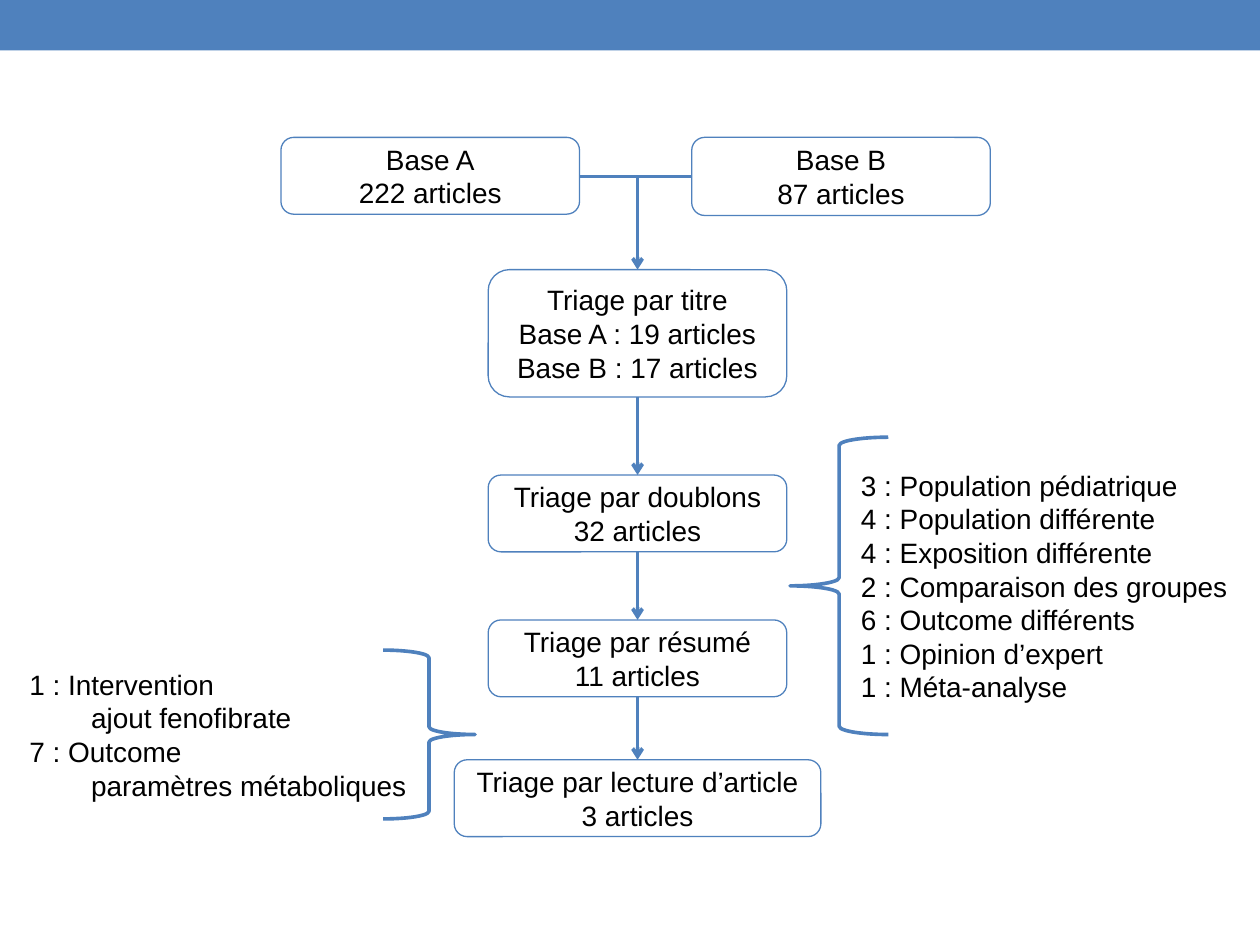
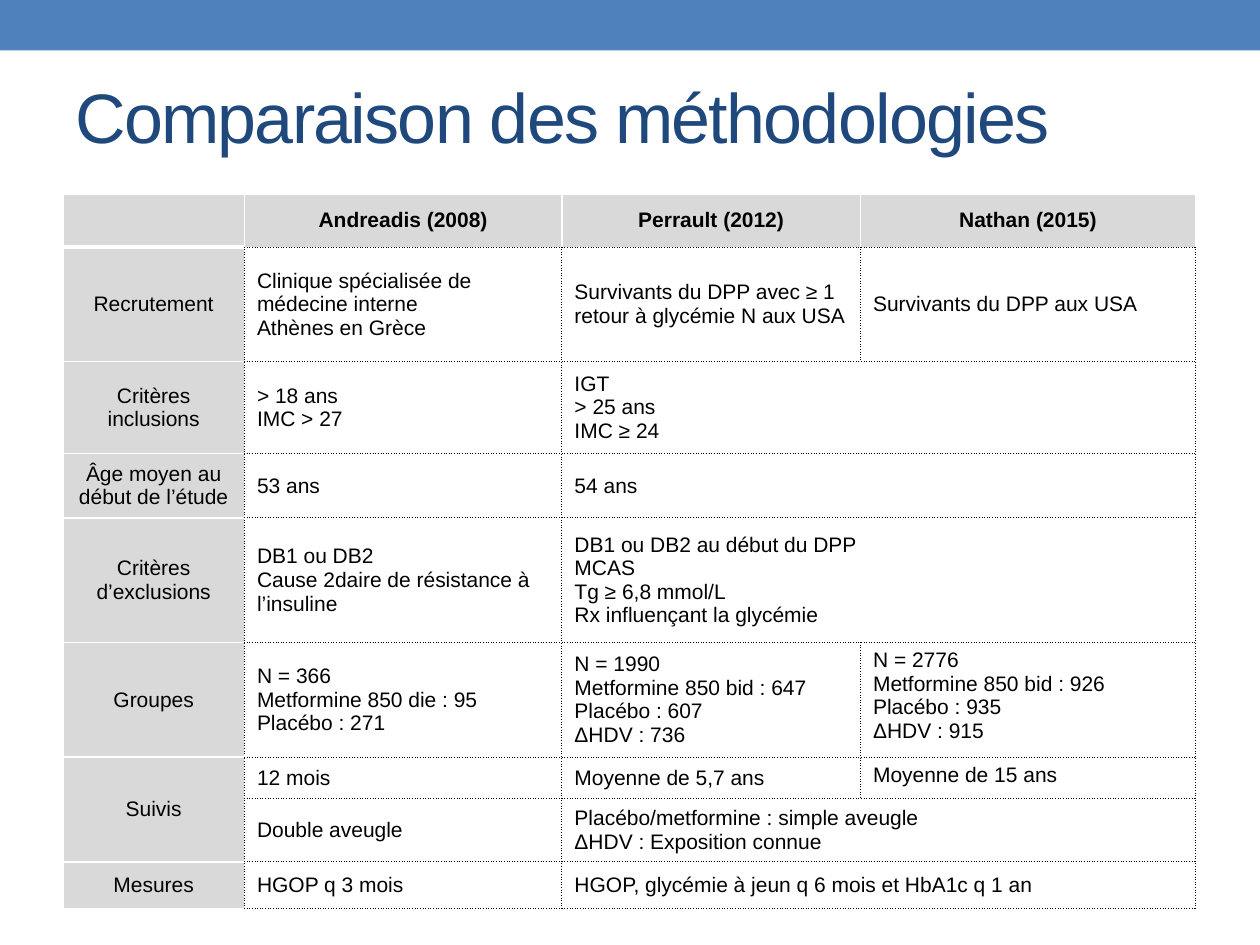
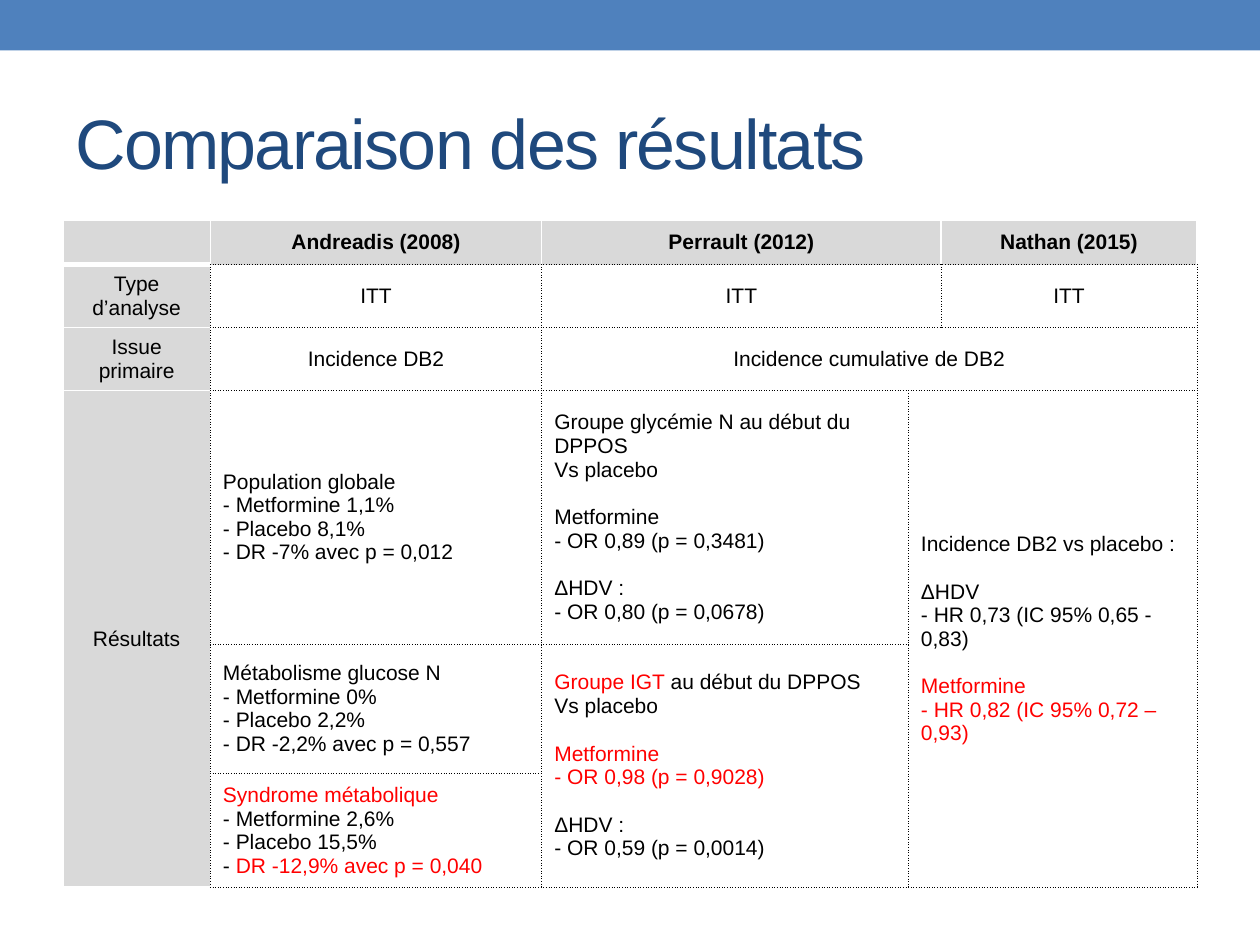
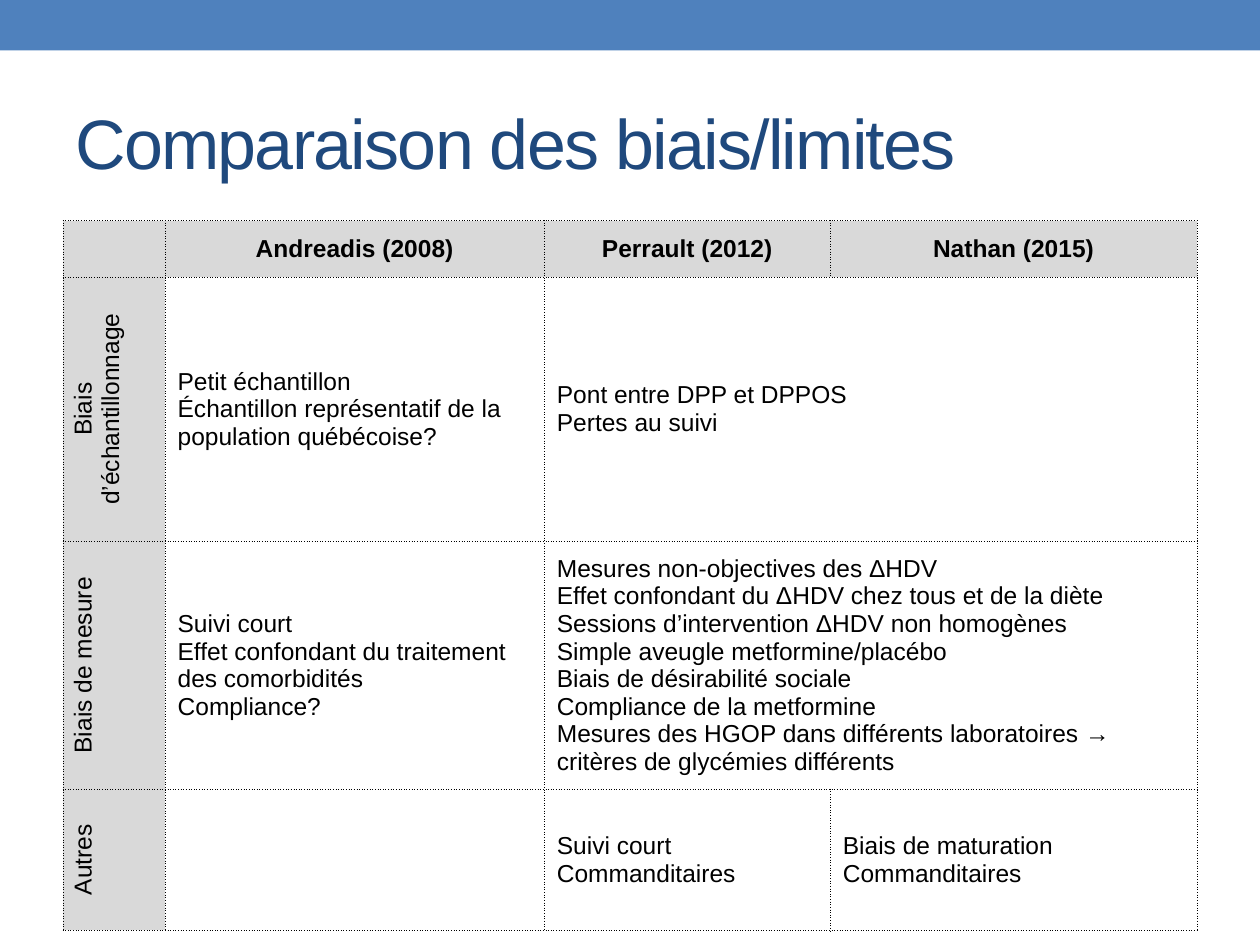
"""Build four slides on the selection and comparison of diabetes prevention studies."""
from itertools import pairwise

from lxml.etree import SubElement
from pptx import Presentation
from pptx.dml.color import RGBColor
from pptx.enum.shapes import MSO_CONNECTOR as Connector, MSO_SHAPE as Shape
from pptx.enum.text import MSO_ANCHOR as Anchor, PP_ALIGN as Align
from pptx.oxml.ns import qn
from pptx.util import Inches, Pt

BLUE = RGBColor(0x4F, 0x81, 0xBD)
NAVY = RGBColor(0x1F, 0x49, 0x7D)
GRAY = RGBColor(0xD9, 0xD9, 0xD9)
BLACK = RGBColor(0x00, 0x00, 0x00)
WHITE = RGBColor(0xFF, 0xFF, 0xFF)
RED = RGBColor(0xFF, 0x00, 0x00)
FONT = "Arial"
FLOW_WIDTH = 2.08
DOTTED = (BLACK, 0.5, "sysDot")
THIN = (WHITE, 1, "solid")
THICK = (WHITE, 3, "solid")
STUDIES = ("Andreadis (2008)", "Perrault (2012)", "Nathan (2015)")


def write_text(frame, text, size, align=Align.LEFT, color=BLACK, bold=False):
    """Write one paragraph a line; *...* is red, a tab indents, an empty line is a gap."""
    frame.word_wrap = True
    paragraph, gap = frame.paragraphs[0], False
    for number, line in enumerate(text.split("\n")):
        if not line:
            gap = True
            continue
        if number:
            paragraph = frame.add_paragraph()
        paragraph.alignment = align
        if gap:
            paragraph.space_before, gap = Pt(size * 1.15), False
        if line.startswith("\t"):
            paragraph._p.get_or_add_pPr().set("marL", str(Inches(0.49)))
        for part, words in enumerate(line.strip("\t").split("*")):
            if words:
                run = paragraph.add_run()
                run.text = words
                run.font.name, run.font.size, run.font.bold = FONT, Pt(size), bold
                run.font.color.rgb = RED if part % 2 else color
    for paragraph in frame.paragraphs:
        ending = SubElement(paragraph._p, qn("a:endParaRPr"), sz=str(size * 100))
        SubElement(ending, qn("a:latin"), typeface=FONT)


def add_shape(slide, kind, box, fill=None, line=None, width=0.75):
    """Add a flat preset shape."""
    shape = slide.shapes.add_shape(kind, *map(Inches, box))
    shape.shadow.inherit = False
    if fill is None:
        shape.fill.background()
    else:
        shape.fill.solid()
        shape.fill.fore_color.rgb = fill
    if line is None:
        shape.line.fill.background()
    else:
        shape.line.color.rgb = line
        shape.line.width = Pt(width)
    return shape


def add_text_shape(slide, box, text, align=Align.CENTER, line=BLUE):
    """Add a rounded rectangle holding text."""
    shape = add_shape(slide, Shape.ROUNDED_RECTANGLE, box, line=line)
    shape.text_frame.vertical_anchor = Anchor.MIDDLE
    write_text(shape.text_frame, text, 16, align)


def add_flow_line(slide, start, end, arrow=True):
    """Add a connector, with an arrowhead at its end if wanted."""
    connector = slide.shapes.add_connector(
        Connector.STRAIGHT, *map(Inches, (*start, *end)))
    connector.line.color.rgb = BLUE
    connector.line.width = Pt(FLOW_WIDTH)
    if arrow:
        SubElement(connector.line._get_or_add_ln(), qn("a:tailEnd"), type="arrow")
    SubElement(connector._element.spPr, qn("a:effectLst"))


def add_slide(presentation, title=None, title_top=0.58):
    """Add a blank slide with the top band and an optional title."""
    slide = presentation.slides.add_slide(presentation.slide_layouts[6])
    add_shape(slide, Shape.RECTANGLE, (0, 0, 10, 0.4), fill=BLUE)
    if title:
        box = slide.shapes.add_textbox(*map(Inches, (0.5, title_top, 9, 1.08)))
        box.text_frame.vertical_anchor = Anchor.MIDDLE
        write_text(box.text_frame, title, 40, color=NAVY)
        for run in box.text_frame.paragraphs[0].runs:
            run.font._element.set("spc", "-100")
    return slide


def set_borders(cell, left, right, top, bottom):
    """Draw the four borders of a cell, each given as colour, width and dash."""
    properties = cell._tc.get_or_add_tcPr()
    for side, (color, width, dash) in zip("LRTB", (left, right, top, bottom)):
        line = SubElement(properties, qn(f"a:ln{side}"), w=str(Pt(width)))
        fill = SubElement(line, qn("a:solidFill"))
        SubElement(fill, qn("a:srgbClr"), val=str(color))
        SubElement(line, qn("a:prstDash"), val=dash)


def choose_borders(row, column):
    """Return left, right, top and bottom borders for white-ruled headings."""
    if row == 0:
        return THIN, THIN, THIN, DOTTED if column else THICK
    if column == 0:
        return THIN, DOTTED, THICK if row == 1 else THIN, THIN
    return (DOTTED,) * 4


def add_comparison(slide, top, widths, heights, rows, spans, size=12,
                   centred_rows=1, top_cells=(), white_rules=True, upright=False):
    """Add a table with gray headings; spans maps a cell to its last merged cell."""
    frame = slide.shapes.add_table(
        len(heights), len(widths), Inches(0.5), Inches(top),
        Inches(sum(widths)), Inches(sum(heights)))
    table = frame.table
    table.first_row = table.horz_banding = False
    for column, width in zip(table.columns, widths):
        column.width = Inches(width)
    for row, height in zip(table.rows, heights):
        row.height = Inches(height)
    for row, texts in enumerate(rows):
        for column, text in enumerate(texts):
            cell = table.cell(row, column)
            heading = row == 0 or column == 0
            borders = choose_borders(row, column) if white_rules else (DOTTED,) * 4
            set_borders(cell, *borders)
            if heading:
                cell.fill.solid()
                cell.fill.fore_color.rgb = GRAY
            else:
                cell.fill.background()
            if (row, column) not in top_cells:
                cell.vertical_anchor = Anchor.MIDDLE
            if upright and row and column == 0:
                cell._tc.get_or_add_tcPr().set("vert", "vert270")
            centred = heading or row < centred_rows
            write_text(cell.text_frame, text, size,
                       Align.CENTER if centred else Align.LEFT, bold=row == 0)
    for first, last in spans.items():
        table.cell(*first).merge(table.cell(*last))


def build_selection(presentation):
    """Build the flow of article selection."""
    slide = add_slide(presentation)
    center, source_line = 5.06, 1.4
    add_text_shape(slide, (2.23, 1.09, 2.37, 0.61), "Base A\n222 articles")
    add_text_shape(slide, (5.49, 1.09, 2.37, 0.62), "Base B\n87 articles")
    steps = [
        (2.14, 2.37, 1.01, "Triage par titre\nBase A : 19 articles\nBase B : 17 articles"),
        (3.77, 2.37, 0.61, "Triage par doublons\n32 articles"),
        (4.92, 2.37, 0.61, "Triage par résumé\n11 articles"),
        (6.03, 2.91, 0.61, "Triage par lecture d’article\n3 articles"),
    ]
    for top, width, height, text in steps:
        add_text_shape(slide, (center - width / 2, top, width, height), text)
    add_text_shape(
        slide, (6.62, 3.47, 3.4, 2.36),
        "3 : Population pédiatrique\n4 : Population différente\n"
        "4 : Exposition différente\n2 : Comparaison des groupes\n"
        "6 : Outcome différents\n1 : Opinion d’expert\n1 : Méta-analyse",
        Align.LEFT, line=None)
    add_text_shape(
        slide, (0.02, 4.65, 3.49, 2.36),
        "1 : Intervention\n\tajout fenofibrate\n7 : Outcome\n\tparamètres métaboliques",
        Align.LEFT, line=WHITE)
    for kind, box in ((Shape.LEFT_BRACE, (6.27, 3.47, 0.78, 2.36)),
                      (Shape.RIGHT_BRACE, (3.04, 5.16, 0.73, 1.34))):
        add_shape(slide, kind, box, line=BLUE, width=FLOW_WIDTH)
    add_flow_line(slide, (4.6, source_line), (5.49, source_line), arrow=False)
    add_flow_line(slide, (center, source_line), (center, steps[0][0]))
    for (top, _, height, _), (next_top, *_) in pairwise(steps):
        add_flow_line(slide, (center, top + height), (center, next_top))


def build_methods(presentation):
    """Build the comparison of methods."""
    slide = add_slide(presentation, "Comparaison des méthodologies", 0.38)
    rows = [
        ("", *STUDIES),
        ("Recrutement",
         "Clinique spécialisée de médecine interne\nAthènes en Grèce",
         "Survivants du DPP avec ≥ 1 retour à glycémie N aux USA",
         "Survivants du DPP aux USA"),
        ("Critères inclusions", "> 18 ans\nIMC > 27", "IGT\n> 25 ans\nIMC ≥ 24", ""),
        ("Âge moyen au début de l’étude", "53 ans", "54 ans", ""),
        ("Critères d’exclusions",
         "DB1 ou DB2\nCause 2daire de résistance à l’insuline",
         "DB1 ou DB2 au début du DPP\nMCAS\nTg ≥ 6,8 mmol/L\n"
         "Rx influençant la glycémie", ""),
        ("Groupes",
         "N = 366\nMetformine 850 die : 95\nPlacébo : 271",
         "N = 1990\nMetformine 850 bid : 647\nPlacébo : 607\nΔHDV : 736",
         "N = 2776\nMetformine 850 bid : 926\nPlacébo : 935\nΔHDV : 915"),
        ("Suivis", "12 mois", "Moyenne de 5,7 ans", "Moyenne de 15 ans"),
        ("", "Double aveugle",
         "Placébo/metformine : simple aveugle\nΔHDV : Exposition connue", ""),
        ("Mesures", "HGOP q 3 mois",
         "HGOP, glycémie à jeun q 6 mois et HbA1c q 1 an", ""),
    ]
    spans = {(row, 2): (row, 3) for row in (2, 3, 4, 7, 8)}
    spans[6, 0] = (7, 0)
    add_comparison(slide, 1.54, (1.44, 2.52, 2.37, 2.66),
                   (0.42, 0.91, 0.73, 0.51, 0.99, 0.91, 0.33, 0.34, 0.37),
                   rows, spans, top_cells=((5, 3), (6, 3)))


def build_results(presentation):
    """Build the comparison of results."""
    slide = add_slide(presentation, "Comparaison des résultats")
    andreadis, perrault, nathan = STUDIES
    rows = [
        ("", andreadis, perrault, "", nathan),
        ("Type d’analyse", "ITT", "ITT", "", "ITT"),
        ("Issue primaire", "Incidence DB2", "Incidence cumulative de DB2", "", ""),
        ("Résultats",
         "Population globale\n- Metformine 1,1%\n- Placebo 8,1%\n"
         "- DR -7% avec p = 0,012",
         "Groupe glycémie N au début du DPPOS\nVs placebo\n\n"
         "Metformine\n- OR 0,89 (p = 0,3481)\n\nΔHDV :\n- OR 0,80 (p = 0,0678)",
         "Incidence DB2 vs placebo :\n\nΔHDV\n- HR 0,73 (IC 95% 0,65 - 0,83)\n\n"
         "*Metformine*\n*- HR 0,82 (IC 95% 0,72 – 0,93)*", ""),
        ("",
         "Métabolisme glucose N\n- Metformine 0%\n- Placebo 2,2%\n"
         "- DR -2,2% avec p = 0,557",
         "*Groupe IGT *au début du DPPOS\nVs placebo\n\n"
         "*Metformine*\n*- OR 0,98 (p = 0,9028)*\n\nΔHDV :\n- OR 0,59 (p = 0,0014)",
         "", ""),
        ("",
         "*Syndrome métabolique*\n- Metformine 2,6%\n- Placebo 15,5%\n"
         "- *DR -12,9% avec p = 0,040*", "", "", ""),
    ]
    spans = {(0, 2): (0, 3), (1, 2): (1, 3), (2, 2): (2, 4),
             (3, 0): (5, 0), (3, 3): (5, 4), (4, 2): (5, 2)}
    add_comparison(slide, 1.75, (1.17, 2.63, 2.91, 0.26, 2.03),
                   (0.35, 0.42, 0.39, 2.01, 1.03, 0.41), rows, spans, centred_rows=3)


def build_biases(presentation):
    """Build the comparison of biases and limits."""
    slide = add_slide(presentation, "Comparaison des biais/limites")
    rows = [
        ("", *STUDIES),
        ("Biais d’échantillonnage",
         "Petit échantillon\nÉchantillon représentatif de la population québécoise?",
         "Pont entre DPP et DPPOS\nPertes au suivi", ""),
        ("Biais de mesure",
         "Suivi court\nEffet confondant du traitement des comorbidités\nCompliance?",
         "Mesures non-objectives des ΔHDV\n"
         "Effet confondant du ΔHDV chez tous et de la diète\n"
         "Sessions d’intervention ΔHDV non homogènes\n"
         "Simple aveugle metformine/placébo\nBiais de désirabilité sociale\n"
         "Compliance de la metformine\n"
         "Mesures des HGOP dans différents laboratoires → "
         "critères de glycémies différents", ""),
        ("Autres", "", "Suivi court\nCommanditaires",
         "Biais de maturation\nCommanditaires"),
    ]
    add_comparison(slide, 1.75, (0.81, 3.01, 2.27, 2.91), (0.45, 1.87, 1.75, 1.12),
                   rows, {(1, 2): (1, 3), (2, 2): (2, 3)}, size=14,
                   white_rules=False, upright=True)


def main():
    """Build and save the presentation."""
    presentation = Presentation()
    presentation.slide_width, presentation.slide_height = Inches(10), Inches(7.5)
    build_selection(presentation)
    build_methods(presentation)
    build_results(presentation)
    build_biases(presentation)
    presentation.save("out.pptx")


if __name__ == "__main__":
    main()
